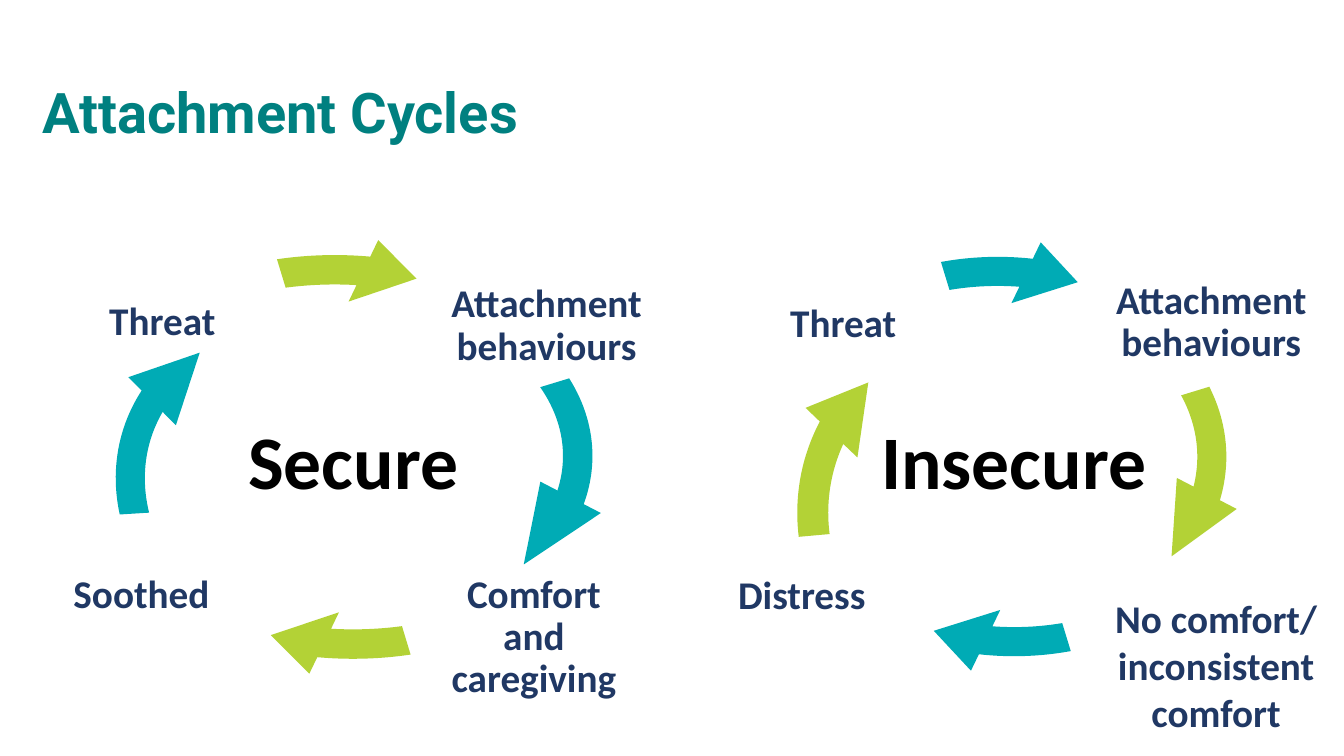
from lxml.etree import SubElement
from pptx import Presentation
from pptx.dml.color import RGBColor
from pptx.enum.shapes import MSO_SHAPE
from pptx.enum.text import MSO_ANCHOR, MSO_AUTO_SIZE, PP_ALIGN
from pptx.oxml.ns import qn
from pptx.util import Cm, Pt

TEAL = RGBColor(0x00, 0x80, 0x80)
TURQUOISE = RGBColor(0x00, 0xAB, 0xB5)
LIME = RGBColor(0xB3, 0xD2, 0x36)
NAVY = RGBColor(0x20, 0x38, 0x64)
BLACK = RGBColor(0x00, 0x00, 0x00)
WHITE = RGBColor(0xFF, 0xFF, 0xFF)

# Circular arrow adjustments: thickness, head angle, end, start, head width
TOP = (0.069, 9.917, 167.508, 151.841, 0.08)
RIGHT = (0.069, 10.938, 5.508, 205.841, 0.08)
BOTTOM = (0.069, 9.955, 59.508, 43.841, 0.08)
LEFT = (0.069, 10.938, 5.508, 203.072, 0.08)

# Each cycle: name with its box, arrows (colour, sweep, box, rotation), labels
CYCLES = [
    (
        ("Secure", (4.88, 10.31, 8.05, 1.91)),
        [
            (LIME, TOP, (0.94, 5.94, 14.99, 10.74), 0),
            (TURQUOISE, RIGHT, (0.43, 6.12, 14.99, 10.74), 0),
            (LIME, BOTTOM, (1.4, 6.35, 14.99, 10.74), 0),
            (TURQUOISE, LEFT, (2.34, 7.29, 12.73, 10.64), 198),
        ],
        [
            ("Threat", (1.65, 6.68, 4.88, 2.92), 0.9),
            ("Attachment behaviours", (10.64, 6.76, 6.27, 2.92), 0.9),
            ("Comfort and caregiving", (10.8, 14.17, 5.31, 3.81), 0.9),
            ("Soothed", (0.91, 13.11, 5.31, 3.81), 0.9),
        ],
    ),
    (
        ("Insecure", (21.93, 10.31, 7.24, 1.88)),
        [
            (TURQUOISE, TOP, (18.44, 5.99, 13.41, 10.62), 0),
            (LIME, RIGHT, (17.98, 6.2, 13.41, 10.62), 0),
            (TURQUOISE, BOTTOM, (18.85, 6.4, 13.41, 10.62), 0),
            (LIME, LEFT, (19.56, 7.39, 11.76, 11.3), 196.3),
        ],
        [
            ("Threat", (19.08, 6.73, 4.34, 2.9), 0.9),
            ("Attachment behaviours", (27.31, 6.68, 6.43, 2.9), 0.9),
            ("No comfort/\ninconsistent comfort", (27.43, 14.88, 6.43, 3.76), 1.0),
            ("Distress", (17.83, 13.16, 4.75, 3.76), 0.9),
        ],
    ),
]


class CycleSlide:
    body_font = "Calibri"
    title_font = "Roboto"
    label_inset = Cm(0.1)

    def __init__(self, presentation):
        self.slide = presentation.slides.add_slide(presentation.slide_layouts[5])

    def format_text(self, frame, font_name, size, color, align, spacing):
        frame.word_wrap = True
        for paragraph in frame.paragraphs:
            paragraph.alignment = align
            paragraph.line_spacing = spacing
            for run in paragraph.runs:
                run.font.name = font_name
                run.font.size = Pt(size)
                run.font.bold = True
                run.font.color.rgb = color

    def title(self, text, box):
        shape = self.slide.shapes.title
        shape.left, shape.top, shape.width, shape.height = map(Cm, box)
        shape.line.color.rgb = WHITE
        shape.line.width = Pt(0.75)
        frame = shape.text_frame
        frame.text = text
        frame.vertical_anchor = MSO_ANCHOR.MIDDLE
        self.format_text(frame, self.title_font, 40, TEAL, PP_ALIGN.LEFT, 0.9)

    def arrow(self, group, color, sweep, box, rotation):
        shape = group.shapes.add_shape(MSO_SHAPE.CIRCULAR_ARROW, *map(Cm, box))
        for index, value in enumerate(sweep):
            shape.adjustments[index] = value
        shape.rotation = rotation
        shape.shadow.inherit = False
        shape.fill.solid()
        shape.fill.fore_color.rgb = color
        shape.line.fill.background()

    def label(self, group, text, box, spacing):
        frame = group.shapes.add_textbox(*map(Cm, box)).text_frame
        frame.text = text
        frame.vertical_anchor = MSO_ANCHOR.MIDDLE
        frame.margin_left = frame.margin_right = self.label_inset
        frame.margin_top = frame.margin_bottom = self.label_inset
        self.format_text(frame, self.body_font, 28, NAVY, PP_ALIGN.CENTER, spacing)

    def cycle_name(self, group, text, box):
        """Add the large name at the centre of a cycle, with a thin white outline."""
        frame = group.shapes.add_textbox(*map(Cm, box)).text_frame
        frame.text = text
        frame.auto_size = MSO_AUTO_SIZE.SHAPE_TO_FIT_TEXT
        self.format_text(frame, self.body_font, 54, BLACK, PP_ALIGN.CENTER, 1.0)
        properties = frame.paragraphs[0].runs[0].font._element
        outline = SubElement(properties, qn("a:ln"), w=str(Pt(0.75)))
        fill = SubElement(outline, qn("a:solidFill"))
        SubElement(fill, qn("a:srgbClr"), val=str(WHITE))
        properties.insert(0, outline)

    def cycle(self, name, arrows, labels):
        group = self.slide.shapes.add_group_shape()
        for arrow in arrows:
            self.arrow(group, *arrow)
        for label in labels:
            self.label(group, *label)
        self.cycle_name(group, *name)


def main():
    presentation = Presentation()
    presentation.slide_width = Cm(33.87)
    presentation.slide_height = Cm(19.05)
    cycle_slide = CycleSlide(presentation)
    cycle_slide.title("Attachment Cycles", (0.81, 1.07, 15.27, 3.68))
    for cycle in CYCLES:
        cycle_slide.cycle(*cycle)
    presentation.save("out.pptx")


if __name__ == "__main__":
    main()
